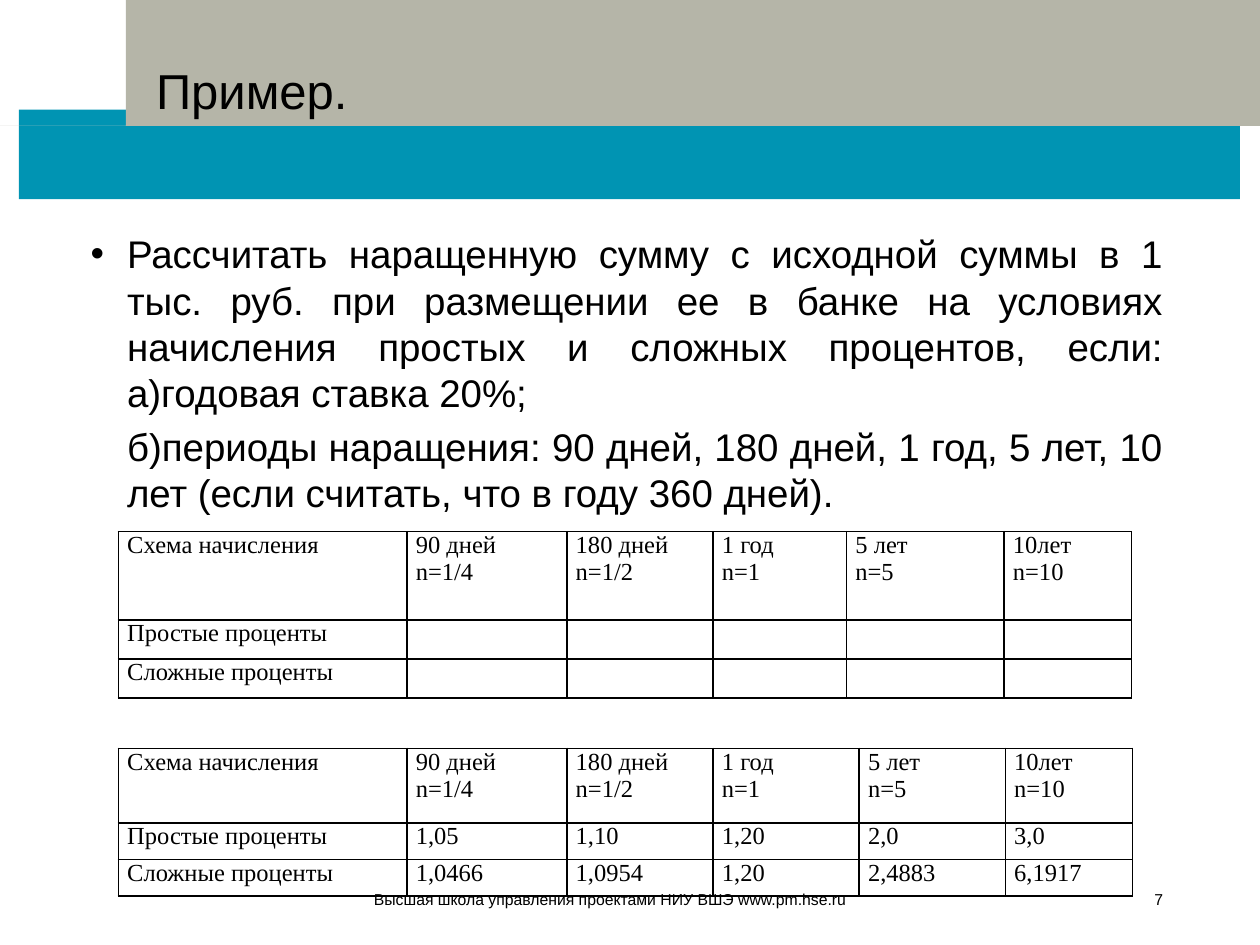
from lxml import etree
from pptx import Presentation
from pptx.dml.color import RGBColor
from pptx.enum.shapes import MSO_SHAPE
from pptx.enum.text import MSO_ANCHOR, PP_ALIGN
from pptx.oxml.ns import qn
from pptx.util import Inches, Pt

RECTANGLE = MSO_SHAPE.RECTANGLE
LEFT, RIGHT, JUSTIFY = PP_ALIGN.LEFT, PP_ALIGN.RIGHT, PP_ALIGN.JUSTIFY
TOP, MIDDLE = MSO_ANCHOR.TOP, MSO_ANCHOR.MIDDLE

COLORS = {"text": "000000", "teal": "0094B3", "stone": "B5B5A8", "veil": "FFFFFF"}

HEADER = ["Схема начисления", "90 дней\nn=1/4", "180 дней\nn=1/2",
          "1 год\nn=1", "5 лет\nn=5", "10лет\nn=10"]
SIMPLE, COMPOUND = "Простые проценты", "Сложные проценты"
BLANKS = [""] * 5
TASK = [
    "Рассчитать наращенную сумму с исходной суммы в 1 тыс. руб. при размещении "
    "ее в банке на условиях начисления простых и сложных процентов, если: "
    "а)годовая ставка 20%;",
    "б)периоды наращения: 90 дней, 180 дней, 1 год, 5 лет, 10 лет "
    "(если считать, что в году 360 дней).",
]


def color(name):
    return RGBColor.from_string(COLORS[name])


def paint(shape, name):
    shape.shadow.inherit = False
    shape.fill.solid()
    shape.fill.fore_color.rgb = color(name)
    shape.line.fill.background()


def add_outline(slide, points, name):
    pen = slide.shapes.build_freeform(*points[0], scale=Inches(1))
    pen.add_line_segments(points[1:], close=True)
    outline = pen.convert_to_shape()
    paint(outline, name)
    return outline


def write(paragraph, text, size, font="Arial", align=LEFT):
    paragraph.alignment = align
    run = paragraph.add_run()
    run.text = text
    for key, value in {"name": font, "size": Pt(size), "bold": False}.items():
        setattr(run.font, key, value)
    run.font.color.rgb = color("text")


def add_text(slide, box, lines, size, align=LEFT, anchor=TOP, inset=0.05):
    frame = slide.shapes.add_textbox(*map(Inches, box)).text_frame
    settings = {"word_wrap": True, "vertical_anchor": anchor,
                "margin_top": Inches(inset), "margin_bottom": Inches(inset)}
    for key, value in settings.items():
        setattr(frame, key, value)
    for i, line in enumerate(lines):
        paragraph = frame.add_paragraph() if i else frame.paragraphs[0]
        write(paragraph, line, size, align=align)
    return frame


def hang(paragraph, indent, bullet=None):
    properties = paragraph._p.get_or_add_pPr()
    properties.set("marL", str(Inches(0.29)))
    properties.set("indent", str(Inches(indent)))
    paragraph.space_after = Pt(4.4)
    if bullet:
        etree.SubElement(properties, qn("a:buFont")).set("typeface", "Arial")
        etree.SubElement(properties, qn("a:buChar")).set("char", bullet)


def add_borders(cell):
    properties = cell._tc.get_or_add_tcPr()
    for i, side in enumerate(("lnL", "lnR", "lnT", "lnB")):
        line = etree.Element(qn(f"a:{side}"), w=str(Pt(1)))
        fill = etree.SubElement(line, qn("a:solidFill"))
        etree.SubElement(fill, qn("a:srgbClr")).set("val", COLORS["text"])
        properties.insert(i, line)


def add_rates(slide, top, widths, heights, rows):
    frame = slide.shapes.add_table(
        len(rows), len(widths), Inches(0.94), Inches(top),
        Inches(sum(widths)), Inches(sum(heights)))
    table = frame.table
    table.first_row = table.horz_banding = False
    for column, width in zip(table.columns, widths):
        column.width = Inches(width)
    for row, height, values in zip(table.rows, heights, rows):
        row.height = Inches(height)
        for cell, value in zip(row.cells, values):
            cell.margin_left = cell.margin_right = Inches(0.07)
            cell.margin_top = cell.margin_bottom = 0
            cell.fill.background()
            add_borders(cell)
            for i, line in enumerate(value.split("\n") if value else []):
                frame = cell.text_frame
                paragraph = frame.add_paragraph() if i else frame.paragraphs[0]
                write(paragraph, line, 14, "Times New Roman", JUSTIFY)


def add_banner(slide):
    band = slide.shapes.add_shape(
        RECTANGLE, Inches(0.15), Inches(0.87), Inches(9.69), Inches(0.71))
    paint(band, "teal")
    add_outline(slide, [
        (0.63, 0.16), (9.84, 0.16), (9.84, 0.87), (0.63, 0.87), (0.63, 0.71),
        (0.32, 0.71), (0.32, 0.59), (0.63, 0.59), (0.63, 0.43), (0.32, 0.43),
        (0.32, 0.31), (0.63, 0.31)], "stone")
    veil = add_outline(slide, [
        (0.63, 1.42), (0.63, 1.27), (0.32, 1.27), (0.32, 1.14), (0.63, 1.14),
        (0.63, 0.99), (0.32, 0.99), (0.32, 0.87), (0.15, 0.87), (0.15, 1.42)],
        "veil")
    tint = veil._element.spPr.find(qn("a:solidFill"))[0]
    etree.SubElement(tint, qn("a:alpha")).set("val", "60000")


def main():
    deck = Presentation()
    deck.slide_width, deck.slide_height = Inches(10), Inches(7.5)
    slide = deck.slides.add_slide(deck.slide_layouts[6])

    # Banner and title
    add_banner(slide)
    add_text(slide, (1.14, 0.43, 8.19, 1.05), ["Пример."], 28)

    # Task
    task = add_text(slide, (0.62, 1.78, 8.71, 5.04), TASK, 22, JUSTIFY)
    hang(task.paragraphs[0], -0.29, "•")
    hang(task.paragraphs[1], 0)

    # Blank table, then the answers
    add_rates(slide, 4.22, [2.29, 1.27, 1.16, 1.06, 1.25, 1.01],
              [0.7, 0.31, 0.31],
              [HEADER, [SIMPLE] + BLANKS, [COMPOUND] + BLANKS])
    add_rates(slide, 5.94, [2.29, 1.27, 1.16, 1.16, 1.16, 1.01],
              [0.59, 0.29, 0.29],
              [HEADER,
               [SIMPLE, "1,05", "1,10", "1,20", "2,0", "3,0"],
               [COMPOUND, "1,0466", "1,0954", "1,20", "2,4883", "6,1917"]])

    # Footer
    for box, text in (
            ((1.14, 7.06, 5.67, 0.15),
             "Высшая школа управления проектами НИУ ВШЭ www.pm.hse.ru"),
            ((8.86, 7.06, 0.47, 0.15), "7")):
        add_text(slide, box, [text], 9, RIGHT, MIDDLE, inset=0)

    deck.save("out.pptx")


if __name__ == "__main__":
    main()
